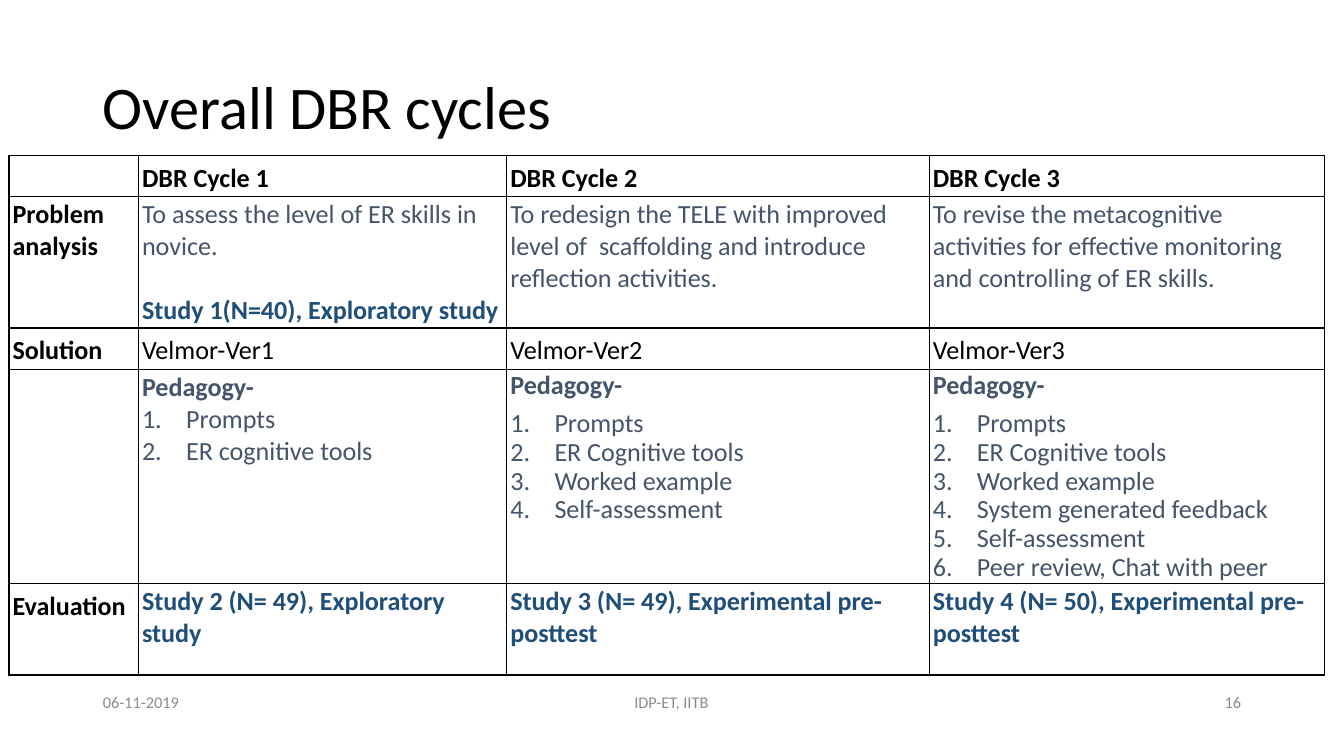
from dataclasses import dataclass

from lxml.etree import SubElement
from pptx import Presentation
from pptx.dml.color import RGBColor
from pptx.enum.text import MSO_ANCHOR as Anchor, PP_ALIGN as Align
from pptx.oxml import parse_xml
from pptx.oxml.ns import nsdecls, qn
from pptx.util import Pt


@dataclass(frozen=True)
class Theme:
    font: str = "Calibri"
    black: str = "000000"
    slate: str = "44546A"
    navy: str = "1F4E79"
    gray: str = "8C8C8C"
    title_size: float = 37
    body_size: float = 16
    footer_size: float = 10


THEME = Theme()
COLUMN_WIDTHS = [79.2, 225.36, 258.48, 241.92]
ROW_HEIGHTS = [24.5, 80.5, 25.3, 131, 56]
LABELS = ["", "Problem analysis", "Solution", "", "Evaluation"]
PROBLEMS = [
    "To assess the level of ER skills in novice.",
    "To redesign the TELE with improved level of  scaffolding and introduce reflection activities.",
    "To revise the metacognitive activities for effective monitoring and controlling of ER skills.",
]
PEDAGOGY = [
    ["Prompts", "ER cognitive tools"],
    ["Prompts", "ER Cognitive tools", "Worked example", "Self-assessment"],
    ["Prompts", "ER Cognitive tools", "Worked example", "System generated feedback",
     "Self-assessment", "Peer review, Chat with peer"],
]
EVALUATIONS = [
    "Study 2 (N= 49), Exploratory study",
    "Study 3 (N= 49), Experimental pre-posttest",
    "Study 4 (N= 50), Experimental pre-posttest",
]


def add_text(frame, text, size=THEME.body_size, color=THEME.black, bold=False,
             align=Align.LEFT, spacing=1.0, after=0, numbered=False):
    paragraph = frame.paragraphs[0] if not frame.text else frame.add_paragraph()
    paragraph.alignment = align
    paragraph.line_spacing = spacing
    paragraph.space_after = Pt(after)
    if numbered:
        properties = paragraph._p.get_or_add_pPr()
        properties.set("marL", str(Pt(27)))
        properties.set("indent", str(-Pt(27)))
        SubElement(properties, qn("a:buAutoNum"), type="arabicPeriod")
    run = paragraph.add_run()
    run.text = text
    font = run.font
    font.name, font.size, font.bold = THEME.font, Pt(size), bold
    font.color.rgb = RGBColor.from_string(color)


def set_insets(target, horizontal, vertical):
    target.margin_left = target.margin_right = Pt(horizontal)
    target.margin_top = target.margin_bottom = Pt(vertical)


def add_text_box(slide, text, left, top, width, height, **text_format):
    frame = slide.shapes.add_textbox(Pt(left), Pt(top), Pt(width), Pt(height)).text_frame
    frame.word_wrap = True
    frame.vertical_anchor = Anchor.MIDDLE
    set_insets(frame, 6, 3)
    add_text(frame, text, **text_format)


def style_cell(cell):
    set_insets(cell, 2.2, 1.4)
    cell.fill.background()
    properties = cell._tc.get_or_add_tcPr()
    for index, side in enumerate("LRTB"):
        properties.insert(index, parse_xml(
            f'<a:ln{side} {nsdecls("a")} w="{Pt(1)}"><a:solidFill>'
            f'<a:srgbClr val="{THEME.black}"/></a:solidFill></a:ln{side}>'))


def add_grid(slide):
    table = slide.shapes.add_table(
        len(ROW_HEIGHTS), len(COLUMN_WIDTHS), Pt(5.5), Pt(95.2),
        Pt(sum(COLUMN_WIDTHS)), Pt(sum(ROW_HEIGHTS))).table
    table.first_row = table.horz_banding = False
    for column, width in zip(table.columns, COLUMN_WIDTHS):
        column.width = Pt(width)
    for row, height in zip(table.rows, ROW_HEIGHTS):
        row.height = Pt(height)
    for cell in table.iter_cells():
        style_cell(cell)
    return table


def fill_labels(table):
    for row, label in enumerate(LABELS):
        if label:
            add_text(table.cell(row, 0).text_frame, label, bold=True, align=Align.JUSTIFY,
                     spacing=1 if label == "Problem analysis" else 1.15)


def fill_cycle(table, cycle):
    header, problem, solution, pedagogy, evaluation = (
        table.cell(row, cycle).text_frame for row in range(len(ROW_HEIGHTS)))
    first = cycle == 1
    add_text(header, f"DBR Cycle {cycle}", bold=True, align=Align.JUSTIFY, spacing=1.15)
    add_text(problem, PROBLEMS[cycle - 1], color=THEME.slate, after=19.5 if first else 0)
    if first:
        add_text(problem, "Study 1(N=40), Exploratory study", color=THEME.navy, bold=True)
    add_text(solution, f"Velmor-Ver{cycle}", align=Align.JUSTIFY, spacing=1.15)
    spacing = 1 if first else 0.9
    add_text(pedagogy, "Pedagogy-", color=THEME.slate, bold=True, spacing=spacing,
             after=0 if first else 5.6)
    for tool in PEDAGOGY[cycle - 1]:
        add_text(pedagogy, tool, color=THEME.slate, spacing=spacing, numbered=True)
    add_text(evaluation, EVALUATIONS[cycle - 1], color=THEME.navy, bold=True)


def add_footer(slide):
    for text, left, width, align in [
        ("06-11-2019", 56.88, 185, Align.LEFT),
        ("IDP-ET, IITB", 272.16, 277.2, Align.CENTER),
        ("16", 580.32, 185, Align.RIGHT),
    ]:
        add_text_box(slide, text, left, 417, width, 24, size=THEME.footer_size,
                     color=THEME.gray, align=align)


def main():
    presentation = Presentation()
    presentation.slide_width, presentation.slide_height = Pt(822.24), Pt(450)
    slide = presentation.slides.add_slide(presentation.slide_layouts[6])
    add_text_box(slide, "Overall DBR cycles", 56.88, 23.76, 709.2, 87.12,
                 size=THEME.title_size, spacing=0.9)
    add_footer(slide)
    table = add_grid(slide)
    fill_labels(table)
    for cycle in range(1, len(COLUMN_WIDTHS)):
        fill_cycle(table, cycle)
    presentation.save("out.pptx")


if __name__ == "__main__":
    main()
